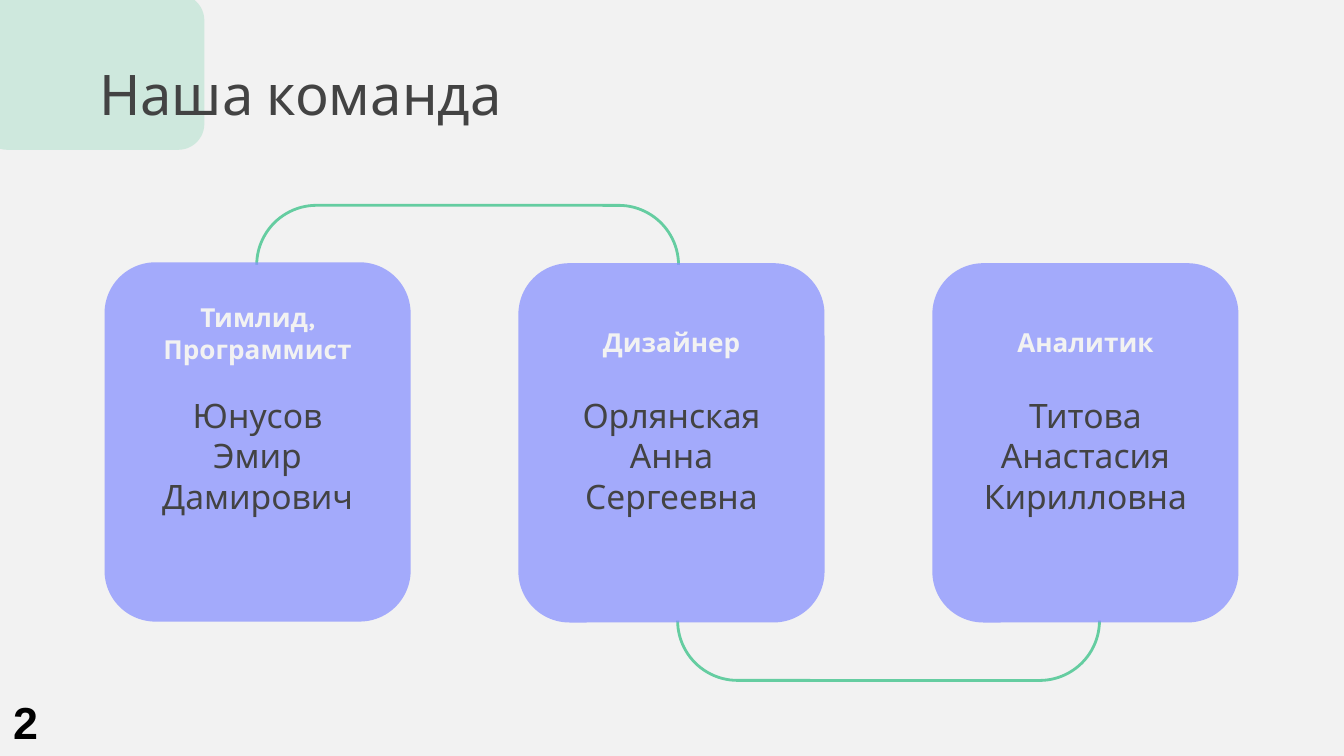
import pptx
import pptx.dml.color
import pptx.enum.shapes
import pptx.enum.text
import pptx.oxml.ns
import pptx.util
from lxml import etree

Pt = pptx.util.Pt
SHAPE = pptx.enum.shapes.MSO_SHAPE
ALIGN = pptx.enum.text.PP_ALIGN
ANCHOR = pptx.enum.text.MSO_ANCHOR

COLORS = {"background": "F2F2F2", "green": "65CDA1", "purple": "8891FF",
          "dark": "434343", "black": "000000"}

TITLE = "Наша команда"
NUMBER = "2"
# role, name, card top, role top
TEAM = [
    ("Тимлид,\vПрограммист", "Юнусов\vЭмир\vДамирович", 140.5, 157),
    ("Дизайнер", "Орлянская\vАнна\vСергеевна", 141, 153.5),
    ("Аналитик", "Титова\vАнастасия\vКирилловна", 141, 153.5),
]
# Each link is an outlined card whose larger part is hidden by a cover:
# outline box, cover box, rotation
LINKS = [
    ((363, 172, 226, 192.5), (339, 157.5, 267, 175), 180),
    ((137.5, 110, 226, 192.5), (120, 142, 267, 175), 0),
]

CARD_LEFT, CARD_STEP = 56, 221.75
CARD_WIDTH, CARD_HEIGHT = 164, 192.5
ROLE_WIDTH, ROLE_HEIGHT = 123, 45.5
NAME_WIDTH, NAME_TOP, NAME_HEIGHT = 159, 196, 87.5


def rgb(name):
    return pptx.dml.color.RGBColor.from_string(COLORS[name])


def add_box(slide, kind, box, fill=None, opacity=100, line=None, rotation=0):
    shape = slide.shapes.add_shape(kind, *map(Pt, box))
    shape.shadow.inherit = False
    shape.rotation = rotation
    if fill:
        shape.fill.solid()
        shape.fill.fore_color.rgb = rgb(fill)
        if opacity < 100:
            color = shape.fill._xPr.find(".//" + pptx.oxml.ns.qn("a:srgbClr"))
            alpha = etree.SubElement(color, pptx.oxml.ns.qn("a:alpha"))
            alpha.set("val", str(opacity * 1000))
    else:
        shape.fill.background()
    if line:
        shape.line.color.rgb = rgb(line)
        shape.line.width = Pt(1.5)
    else:
        shape.line.fill.background()
    return shape


def add_text(slide, text, box, size, color="dark", font="Karla", bold=False,
             align=ALIGN.LEFT, anchor=ANCHOR.TOP, inset=7.2):
    frame = slide.shapes.add_textbox(*map(Pt, box)).text_frame
    frame.word_wrap = True
    frame.vertical_anchor = anchor
    frame.margin_left = frame.margin_right = Pt(7.2)
    frame.margin_top = frame.margin_bottom = Pt(inset)
    paragraph = frame.paragraphs[0]
    paragraph.text = text
    paragraph.alignment = align
    for run in paragraph.runs:
        run.font.name = font
        run.font.size = Pt(size)
        run.font.bold = bold
        run.font.color.rgb = rgb(color)


def main():
    presentation = pptx.Presentation()
    presentation.slide_width, presentation.slide_height = Pt(720), Pt(405)
    slide = presentation.slides.add_slide(presentation.slide_layouts[6])
    slide.background.fill.solid()
    slide.background.fill.fore_color.rgb = rgb("background")

    add_box(slide, SHAPE.ROUNDED_RECTANGLE, (-10, -3, 119.5, 83.25),
            fill="green", opacity=25)
    add_text(slide, TITLE, (46, 24.5, 267, 59), 30)

    for outline, cover, rotation in LINKS:
        add_box(slide, SHAPE.ROUNDED_RECTANGLE, outline, line="green",
                rotation=rotation)
        add_box(slide, SHAPE.RECTANGLE, cover, fill="background",
                rotation=rotation)

    for index, (role, name, card_top, role_top) in enumerate(TEAM):
        left = CARD_LEFT + index * CARD_STEP
        center = left + CARD_WIDTH / 2
        add_box(slide, SHAPE.ROUNDED_RECTANGLE,
                (left, card_top, CARD_WIDTH, CARD_HEIGHT),
                fill="purple", opacity=74)
        add_text(slide, name,
                 (center - NAME_WIDTH / 2, NAME_TOP, NAME_WIDTH, NAME_HEIGHT),
                 18, align=ALIGN.CENTER, anchor=ANCHOR.BOTTOM)
        add_text(slide, role,
                 (center - ROLE_WIDTH / 2, role_top, ROLE_WIDTH, ROLE_HEIGHT),
                 14, color="background", bold=True, align=ALIGN.CENTER,
                 anchor=ANCHOR.BOTTOM)

    add_text(slide, NUMBER, (0, 368.5, 32, 36), 24, color="black",
             font="Arial", bold=True, inset=3.6)
    presentation.save("out.pptx")


if __name__ == "__main__":
    main()
